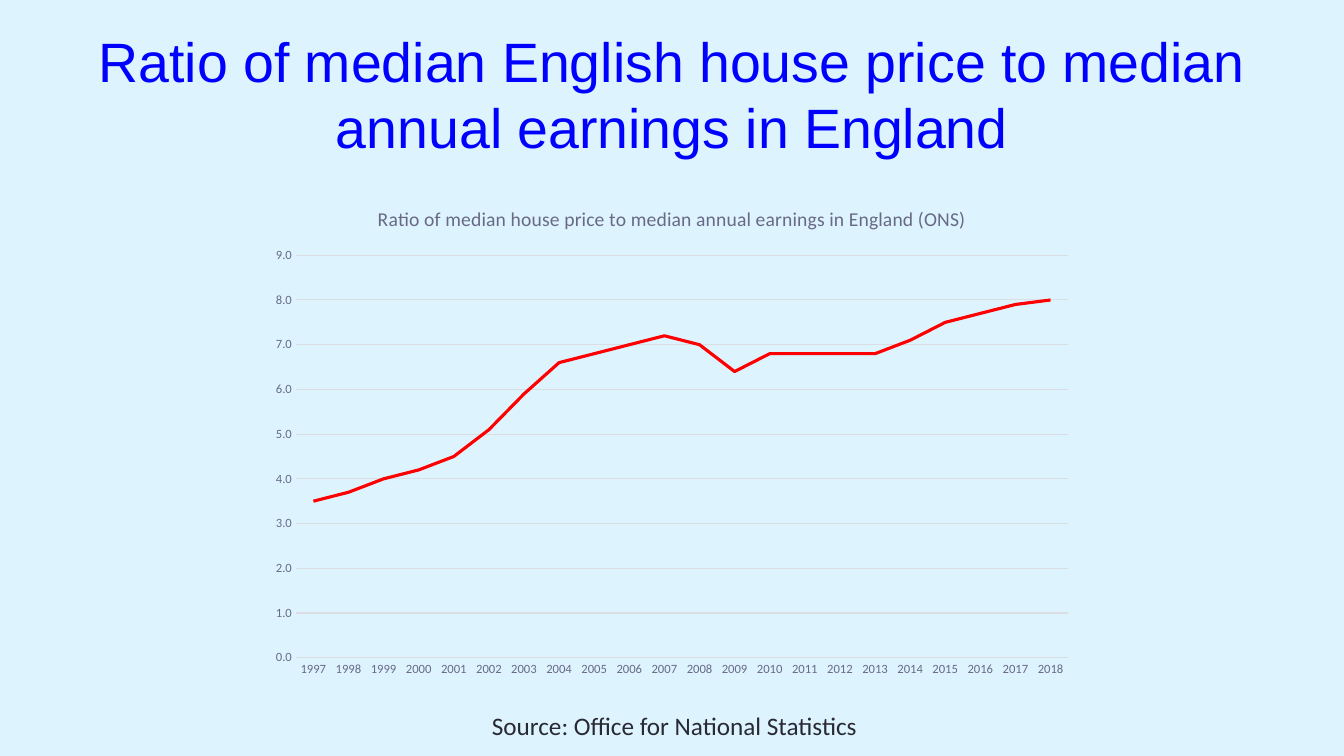
import pptx
import pptx.util
import pptx.chart.data
import pptx.dml.color
import pptx.enum.chart
import pptx.enum.text

WIDE, HIGH = pptx.util.Inches(13.33), pptx.util.Inches(7.5)
SKY, BLUE, RED = "DDF4FF", "0000FF", "FF0000"
INK, SLATE, PALE = "292934", "696986", "DCDCE3"
NAME = "Ratio of median house price to median annual earnings in England (ONS)"
YEARS = [str(year) for year in range(1997, 2019)]
RATIOS = [3.5, 3.7, 4, 4.2, 4.5, 5.1, 5.9, 6.6, 6.8, 7, 7.2,
          7, 6.4, 6.8, 6.8, 6.8, 6.8, 7.1, 7.5, 7.7, 7.9, 8]


def color(code):
    return pptx.dml.color.RGBColor.from_string(code)


def share(left, top, width, height):
    return (round(left * WIDE), round(top * HIGH),
            round(width * WIDE), round(height * HIGH))


def style(font, size, code, face="Calibri"):
    font.size = pptx.util.Pt(size)
    font.name = face
    font.bold = False
    font.color.rgb = color(code)


def write(frame, text, size=18, code=INK, face="Calibri", align=None):
    para = frame.paragraphs[0]
    para.alignment = align
    run = para.add_run()
    run.text = text
    style(run.font, size, code, face)


def stroke(line, code, width):
    line.color.rgb = color(code)
    line.width = pptx.util.Pt(width)


def add_title(slide, box):
    title = slide.shapes.title
    title.left, title.top, title.width, title.height = box
    frame = title.text_frame
    frame.word_wrap = True
    frame.auto_size = pptx.enum.text.MSO_AUTO_SIZE.NONE
    frame.vertical_anchor = pptx.enum.text.MSO_ANCHOR.MIDDLE
    write(frame, "Ratio of median English house price to median annual earnings in England",
          size=39.6, code=BLUE, face="Arial", align=pptx.enum.text.PP_ALIGN.CENTER)


def add_graph(slide, box):
    data = pptx.chart.data.CategoryChartData(number_format="0.0")
    data.categories = YEARS
    data.add_series(NAME, RATIOS)
    kind = pptx.enum.chart.XL_CHART_TYPE.LINE
    chart = slide.shapes.add_chart(kind, *box, data).chart
    style(chart.font, 10, INK)
    chart.has_legend = False
    chart.has_title = True
    write(chart.chart_title.text_frame, NAME, size=14, code=SLATE)
    chart.chart_title.include_in_layout = False

    for axis in (chart.category_axis, chart.value_axis):
        axis.major_tick_mark = axis.minor_tick_mark = pptx.enum.chart.XL_TICK_MARK.NONE
        style(axis.tick_labels.font, 9, SLATE)
    stroke(chart.category_axis.format.line, PALE, 0.75)
    scale = chart.value_axis
    scale.minimum_scale, scale.maximum_scale, scale.major_unit = 0, 9, 1
    scale.format.line.fill.background()
    stroke(scale.major_gridlines.format.line, PALE, 0.75)
    scale.tick_labels.number_format = "0.0;[Red]0.0"
    scale.tick_labels.number_format_is_linked = False

    plot = chart.plots[0]
    plot.vary_by_categories = False
    trend = plot.series[0]
    trend.smooth = False
    trend.marker.style = pptx.enum.chart.XL_MARKER_STYLE.NONE
    stroke(trend.format.line, RED, 2.25)


def add_source(slide, box):
    frame = slide.shapes.add_textbox(*box).text_frame
    frame.word_wrap = True
    write(frame, "Source: Office for National Statistics")


def main():
    deck = pptx.Presentation()
    deck.slide_width, deck.slide_height = WIDE, HIGH
    slide = deck.slides.add_slide(deck.slide_layouts[5])
    fill = slide.background.fill
    fill.solid()
    fill.fore_color.rgb = color(SKY)
    add_title(slide, share(0.05, 0.04, 0.9, 1 / 6))
    add_graph(slide, share(0.193, 0.247, 0.614, 0.661))
    add_source(slide, share(0.3586, 0.933, 0.294, 0.053))
    deck.save("out.pptx")


if __name__ == "__main__":
    main()
